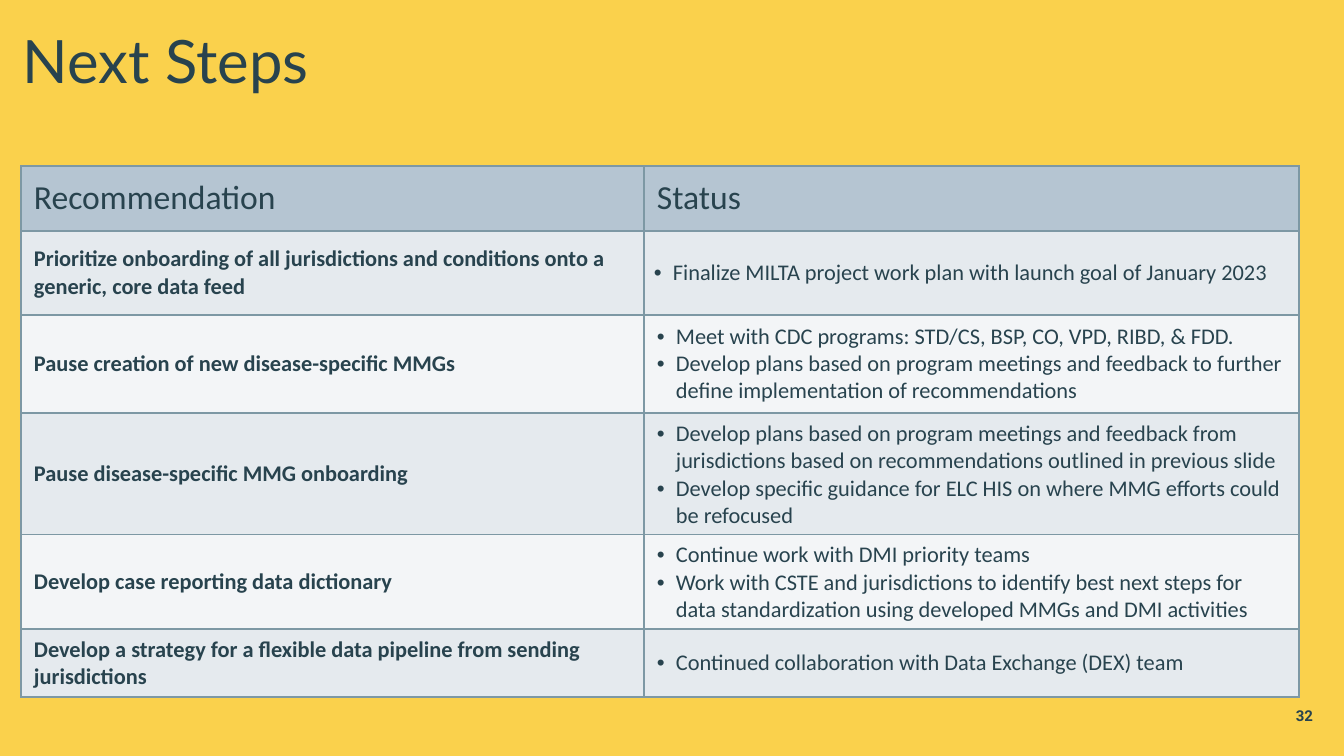
from lxml.etree import SubElement
from pptx import Presentation
from pptx.dml.color import RGBColor
from pptx.enum.text import MSO_ANCHOR, PP_ALIGN
from pptx.oxml.ns import qn
from pptx.util import Emu, Pt

# Scale and palette
SCALE = 9144000 / 1008  # EMU per px, 100.8 px to the inch
YELLOW = RGBColor(0xFA, 0xD1, 0x4C)
SLATE = RGBColor(0x28, 0x43, 0x4E)
HEADER_FILL = RGBColor(0xB5, 0xC5, 0xD2)
ROW_FILLS = (RGBColor(0xE5, 0xEA, 0xEE), RGBColor(0xF3, 0xF5, 0xF7))
BORDER = RGBColor(0x7D, 0x98, 0xA4)

# Table content
HEADINGS = ("Recommendation", "Status")
STEPS = [
    ("Prioritize onboarding of all jurisdictions and conditions onto a generic, core data feed",
     ["Finalize MILTA project work plan with launch goal of January 2023"]),
    ("Pause creation of new disease-specific MMGs",
     ["Meet with CDC programs: STD/CS, BSP, CO, VPD, RIBD, & FDD.",
      "Develop plans based on program meetings and feedback to further define "
      "implementation of recommendations"]),
    ("Pause disease-specific MMG onboarding",
     ["Develop plans based on program meetings and feedback from jurisdictions based on "
      "recommendations outlined in previous slide",
      "Develop specific guidance for ELC HIS on where MMG efforts could be refocused"]),
    ("Develop case reporting data dictionary",
     ["Continue work with DMI priority teams",
      "Work with CSTE and jurisdictions to identify best next steps for data standardization "
      "using developed MMGs and DMI activities"]),
    ("Develop a strategy for a flexible data pipeline from sending jurisdictions",
     ["Continued collaboration with Data Exchange (DEX) team"]),
]
COLUMN_WIDTHS = (623, 655)
ROW_HEIGHTS = (65, 84, 98, 121, 94, 68)
CELL_INSETS = (13, 7)
TIGHT_INSETS = (10, 0)


def px(length):
    return Emu(round(length * SCALE))


def add_run(paragraph, text, size, font_name, bold=False):
    run = paragraph.add_run()
    run.text = text
    run.font.size = Pt(size)
    run.font.name = font_name
    run.font.bold = bold
    run.font.color.rgb = SLATE


def add_label(slide, box, text, size, font_name, bold=False, align=PP_ALIGN.LEFT):
    frame = slide.shapes.add_textbox(*map(px, box)).text_frame
    frame.word_wrap = True
    frame.vertical_anchor = MSO_ANCHOR.MIDDLE
    frame.paragraphs[0].alignment = align
    add_run(frame.paragraphs[0], text, size, font_name, bold)


def add_bullet(paragraph):
    properties = paragraph._p.get_or_add_pPr()
    properties.set("marL", str(px(19)))
    properties.set("indent", str(px(-19)))
    SubElement(properties, qn("a:buFont"), typeface="Arial")
    SubElement(properties, qn("a:buChar"), char="•")


def style_cell(cell, fill_color, insets):
    cell.vertical_anchor = MSO_ANCHOR.MIDDLE
    cell.margin_left = cell.margin_right = px(insets[0])
    cell.margin_top = cell.margin_bottom = px(insets[1])
    properties = cell._tc.get_or_add_tcPr()
    for side in ("a:lnL", "a:lnR", "a:lnT", "a:lnB"):
        line = SubElement(properties, qn(side), w=str(Pt(1)))
        SubElement(SubElement(line, qn("a:solidFill")), qn("a:srgbClr"), val=str(BORDER))
    cell.fill.solid()
    cell.fill.fore_color.rgb = fill_color


def fill_cell(cell, lines, fill_color, size=16, bold=False, bullets=False, insets=CELL_INSETS):
    style_cell(cell, fill_color, insets)
    frame = cell.text_frame
    for index, line in enumerate(lines):
        paragraph = frame.add_paragraph() if index else frame.paragraphs[0]
        if bullets:
            add_bullet(paragraph)
        add_run(paragraph, line, size, "Calibri", bold)


def add_steps_table(slide):
    table = slide.shapes.add_table(
        len(ROW_HEIGHTS), len(COLUMN_WIDTHS), px(21), px(166),
        px(sum(COLUMN_WIDTHS)), px(sum(ROW_HEIGHTS))).table
    table.horz_banding = False
    for column, width in zip(table.columns, COLUMN_WIDTHS):
        column.width = px(width)
    for row, height in zip(table.rows, ROW_HEIGHTS):
        row.height = px(height)

    # Header row
    for index, heading in enumerate(HEADINGS):
        fill_cell(table.cell(0, index), [heading], HEADER_FILL, size=24)

    # One row per recommendation
    for index, (recommendation, status) in enumerate(STEPS):
        fill_color = ROW_FILLS[index % 2]
        fill_cell(table.cell(index + 1, 0), [recommendation], fill_color, bold=True)
        fill_cell(table.cell(index + 1, 1), status, fill_color, bullets=True,
                  insets=CELL_INSETS if index else TIGHT_INSETS)


def main():
    deck = Presentation()
    deck.slide_width, deck.slide_height = px(1344), px(756)
    slide = deck.slides.add_slide(deck.slide_layouts[6])
    slide.background.fill.solid()
    slide.background.fill.fore_color.rgb = YELLOW

    # Title, table and page number
    add_label(slide, (13, 0, 1277, 120), "Next Steps", 42.7, "Lato")
    add_steps_table(slide)
    add_label(slide, (1256, 696, 67, 40), "32", 10.7, "Roboto", bold=True, align=PP_ALIGN.RIGHT)

    deck.save("out.pptx")


if __name__ == "__main__":
    main()
